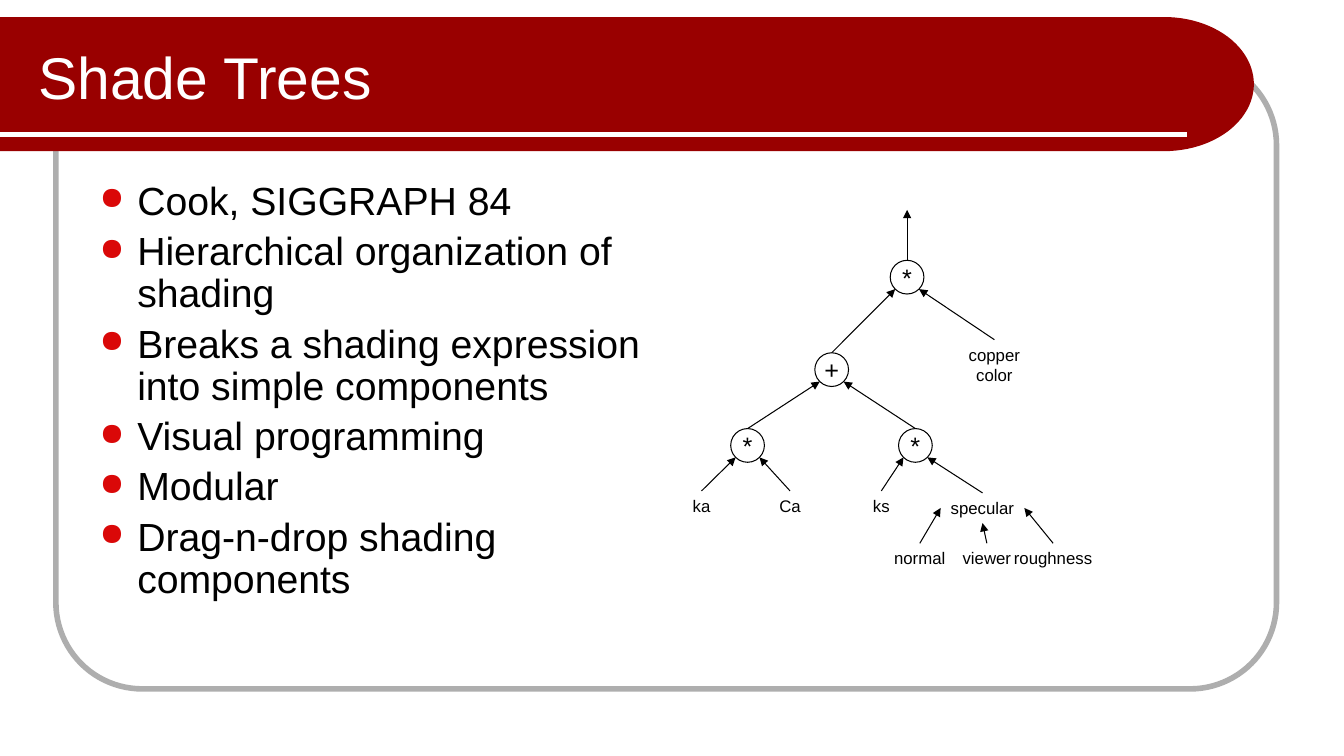
import math
from dataclasses import dataclass

import pptx
import pptx.dml.color
import pptx.enum.shapes
import pptx.enum.text
import pptx.oxml
import pptx.oxml.ns
import pptx.util

Cm, Pt = pptx.util.Cm, pptx.util.Pt
Shape = pptx.enum.shapes.MSO_SHAPE
Anchor = pptx.enum.text.MSO_ANCHOR
Align = pptx.enum.text.PP_ALIGN
AutoSize = pptx.enum.text.MSO_AUTO_SIZE

FONT = "Arial"
WHITE, BLACK, RED, GREY, BULLET_RED = "FFFFFF", "000000", "990000", "AEAEAE", "DA0808"
CIRCLE_SIZE, LABEL_HEIGHT = 0.85, 0.76

# Where an arrow meets its parent, as fractions of the parent's width and height
DIAGONAL = math.sqrt(0.5) / 2
CIRCLE_ENDS = {"left": (0.5 - DIAGONAL, 0.5 + DIAGONAL), "right": (0.5 + DIAGONAL, 0.5 + DIAGONAL)}
LABEL_ENDS = {"left": (0, 0.5), "middle": (0.5, 1), "right": (1, 0.5)}


@dataclass
class Node:
    """One tree node: centre x, top, size in cm, and the side of its parent it feeds."""
    text: str
    center: float
    top: float
    parent: "Node | None" = None
    side: str = ""
    width: float = CIRCLE_SIZE
    height: float = LABEL_HEIGHT
    circle: bool = False

    @property
    def left(self) -> float:
        return self.center - self.width / 2

    def arrow_end(self, side: str) -> tuple[float, float]:
        across, down = (CIRCLE_ENDS if self.circle else LABEL_ENDS)[side]
        return self.left + across * self.width, self.top + down * self.height


def operator(text: str, center: float, top: float, parent: Node | None = None, side: str = "") -> Node:
    return Node(text, center, top, parent, side, height=CIRCLE_SIZE, circle=True)


def color(value: str) -> pptx.dml.color.RGBColor:
    return pptx.dml.color.RGBColor.from_string(value)


def apply(target, values: dict) -> None:
    for name, value in values.items():
        setattr(target, name, value)


def write(para, text: str, size: float, ink: str, **values) -> None:
    para.text = text
    apply(para, values)
    for span in para.runs:
        apply(span.font, {"name": FONT, "size": Pt(size)})
        span.font.color.rgb = color(ink)


def outline(shape, ink: str, width: float) -> None:
    shape.line.color.rgb = color(ink)
    shape.line.width = Pt(width)


def add_line(page, start: tuple[float, float], end: tuple[float, float],
             ink: str = BLACK, width: float = 0.75, arrow: bool = True) -> None:
    line = page.shapes.add_connector(
        pptx.enum.shapes.MSO_CONNECTOR.STRAIGHT, *(Cm(value) for value in (*start, *end)))
    outline(line, ink, width)
    properties = line.element.spPr
    if arrow:
        head = pptx.oxml.parse_xml(
            f'<a:tailEnd {pptx.oxml.ns.nsdecls("a")} type="triangle"/>')
        properties.find(pptx.oxml.ns.qn("a:ln")).append(head)
    properties.append(pptx.oxml.parse_xml(f'<a:effectLst {pptx.oxml.ns.nsdecls("a")}/>'))


def add_outlined(page, kind, box: tuple[float, ...], ink: str, width: float):
    shape = page.shapes.add_shape(kind, *(Cm(value) for value in box))
    shape.shadow.inherit = False
    shape.fill.background()
    outline(shape, ink, width)
    return shape


def add_band(page) -> None:
    """Red title band with a half-ellipse at its right end."""
    center_x, center_y, radius_x, radius_y = 29.34, 2.12, 2.26, 1.69
    steps = 48
    angles = [math.pi * (step / steps - 0.5) for step in range(steps + 1)]
    arc = [(Cm(center_x + radius_x * math.cos(angle)), Cm(center_y + radius_y * math.sin(angle)))
           for angle in angles]
    builder = page.shapes.build_freeform(0, arc[0][1])
    builder.add_line_segments(arc + [(0, arc[-1][1])], close=True)
    band = builder.convert_to_shape()
    band.shadow.inherit = False
    band.fill.solid()
    band.fill.fore_color.rgb = color(RED)
    band.line.fill.background()


def add_bullets(page, items: list[str]) -> None:
    box = page.shapes.add_textbox(Cm(2.26), Cm(4.45), Cm(14.4), Cm(12.27))
    box.text_frame.word_wrap = True
    for index, item in enumerate(items):
        para = box.text_frame.add_paragraph() if index else box.text_frame.paragraphs[0]
        properties = para._p.get_or_add_pPr()
        properties.set("marL", str(Cm(0.95)))
        properties.set("indent", str(-Cm(0.95)))
        for tag in (f'buClr {{}}><a:srgbClr val="{BULLET_RED}"/></a:buClr>',
                    'buSzPct {} val="80000"/>',
                    'buChar {} char="●"/>'):
            properties.append(pptx.oxml.parse_xml("<a:" + tag.format(pptx.oxml.ns.nsdecls("a"))))
        write(para, item, 28, BLACK, line_spacing=0.9, space_before=Pt(5.6 if index else 0))


def add_node(page, node: Node) -> None:
    place = (node.left, node.top, node.width, node.height)
    if node.circle:
        shape = add_outlined(page, Shape.OVAL, place, BLACK, 0.75)
        values = {"word_wrap": False, "vertical_anchor": Anchor.MIDDLE}
    else:
        shape = page.shapes.add_textbox(*(Cm(value) for value in place))
        values = {"word_wrap": False, "auto_size": AutoSize.SHAPE_TO_FIT_TEXT}
    apply(shape.text_frame, values)
    write(shape.text_frame.paragraphs[0], node.text, 18 if node.circle else 12, BLACK,
          alignment=Align.CENTER)
    # The root's arrow points straight up, every other arrow at the parent
    end = node.parent.arrow_end(node.side) if node.parent else (node.center, node.top - 1.27)
    add_line(page, (node.center, node.top), end)


def shade_tree() -> list[Node]:
    root = operator("*", 22.86, 6.56)
    total = operator("+", 20.96, 8.89, root, "left")
    ambient = operator("*", 18.84, 10.8, total, "left")
    shine = operator("*", 23.07, 10.8, total, "right")
    specular = Node("specular", 24.76, 12.42, shine, "right", 2.11)
    return [
        root, total, ambient, shine, specular,
        Node("copper\ncolor", 25.06, 8.56, root, "right", 1.8, 1.27),
        Node("ka", 17.68, 12.37, ambient, "left", 0.97),
        Node("Ca", 19.91, 12.37, ambient, "right", 1.07),
        Node("ks", 22.21, 12.37, shine, "left", 0.94),
        Node("normal", 23.18, 13.69, specular, "left", 1.8),
        Node("viewer", 24.87, 13.69, specular, "middle", 1.75),
        Node("roughness", 26.54, 13.69, specular, "right", 2.49),
    ]


def main() -> None:
    deck = pptx.Presentation()
    apply(deck, {"slide_width": Cm(33.87), "slide_height": Cm(19.05)})
    page = deck.slides.add_slide(deck.slide_layouts[5])

    # Frame and title band
    frame = add_outlined(page, Shape.ROUNDED_RECTANGLE, (1.41, 1.48, 30.76, 15.88), GREY, 4)
    frame.adjustments[0] = 0.137
    add_band(page)
    add_line(page, (0, 3.39), (29.92, 3.39), WHITE, 3, arrow=False)

    # Title, brought in front of the band
    title = page.shapes.title
    apply(title, {"left": Cm(0.71), "top": Cm(0.64), "width": Cm(26.37), "height": Cm(2.54)})
    apply(title.text_frame, {"vertical_anchor": Anchor.MIDDLE, "auto_size": AutoSize.NONE})
    write(title.text_frame.paragraphs[0], "Shade Trees", 42, WHITE, alignment=Align.LEFT)
    page.shapes.element.append(title.element)

    # Bullet list
    add_bullets(page, [
        "Cook, SIGGRAPH 84",
        "Hierarchical organization of shading",
        "Breaks a shading expression into simple components",
        "Visual programming",
        "Modular",
        "Drag-n-drop shading components",
    ])

    # Shade tree
    for node in shade_tree():
        add_node(page, node)

    deck.save("out.pptx")


if __name__ == "__main__":
    main()
